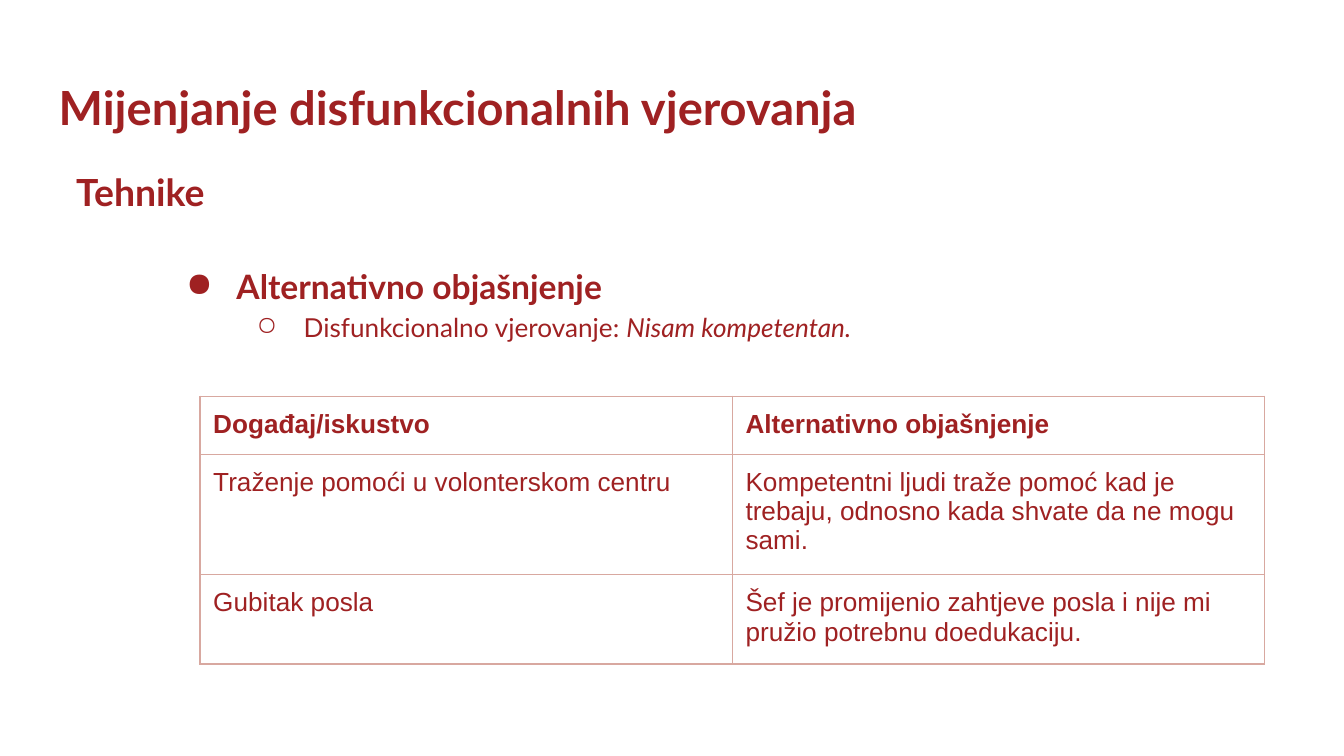
import dataclasses

import lxml.etree
import pptx
import pptx.dml.color
import pptx.oxml.ns
import pptx.util

Cm = pptx.util.Cm
Pt = pptx.util.Pt
qn = pptx.oxml.ns.qn

HUES = {"text": "9F2122", "edge": "D8A8A0", "page": "FFFFFF"}
INSET = Cm(0.25)


@dataclasses.dataclass
class Line:
    text: str
    size: float
    bold: bool = False
    font: str = "Lato"
    tail: str = ""
    mark: str = ""
    level: int = 0
    left: float = 0
    hang: float = 0


@dataclasses.dataclass
class Box:
    left: float
    top: float
    width: float
    height: float
    lines: list[Line]


BOXES = [
    Box(0.86, 1.24, 23.67, 1.6,
        [Line("Mijenjanje disfunkcionalnih vjerovanja", 25.2, True)]),
    Box(2.95, 4.67, 20.14, 9.32, [
        Line("Alternativno objašnjenje", 18, True,
             mark="●", left=1.27, hang=0.95),
        Line("Disfunkcionalno vjerovanje: ", 14, tail="Nisam kompetentan.",
             mark="○", level=1, left=2.54, hang=0.89),
    ]),
    Box(1.19, 2.95, 23.67, 1.6, [Line("Tehnike", 20, True)]),
]

ROWS = [
    (1.06, "Događaj/iskustvo", "Alternativno objašnjenje"),
    (2.18, "Traženje pomoći u volonterskom centru",
     "Kompetentni ljudi traže pomoć kad je trebaju, "
     "odnosno kada shvate da ne mogu sami."),
    (1.61, "Gubitak posla",
     "Šef je promijenio zahtjeve posla i nije mi "
     "pružio potrebnu doedukaciju."),
]


def rgb(name: str) -> pptx.dml.color.RGBColor:
    return pptx.dml.color.RGBColor.from_string(HUES[name])


def add_mark(para, line: Line) -> None:
    para.level = line.level
    para.line_spacing = 1.15
    props = para._p.get_or_add_pPr()
    props.set("marL", str(Cm(line.left)))
    props.set("indent", str(-Cm(line.hang)))
    tint = lxml.etree.SubElement(props, qn("a:buClr"))
    lxml.etree.SubElement(tint, qn("a:srgbClr"), val=HUES["text"])
    lxml.etree.SubElement(props, qn("a:buChar"), char=line.mark)


def write(para, line: Line) -> None:
    if line.mark:
        add_mark(para, line)
    para.add_run().text = line.text
    if line.tail:
        run = para.add_run()
        run.text = line.tail
        run.font.italic = True
    font = para.font
    font.name = line.font
    font.size = Pt(line.size)
    font.bold = line.bold
    font.color.rgb = rgb("text")


def pad(area) -> None:
    area.margin_left = area.margin_right = INSET
    area.margin_top = area.margin_bottom = INSET


def add_box(slide, box: Box) -> None:
    shape = slide.shapes.add_textbox(
        Cm(box.left), Cm(box.top), Cm(box.width), Cm(box.height))
    frame = shape.text_frame
    frame.word_wrap = True
    pad(frame)
    for num, line in enumerate(box.lines):
        para = frame.add_paragraph() if num else frame.paragraphs[0]
        write(para, line)


def add_edges(cell) -> None:
    props = cell._tc.get_or_add_tcPr()
    for spot, side in enumerate("LRTB"):
        edge = lxml.etree.Element(qn(f"a:ln{side}"), w=str(Pt(0.75)))
        fill = lxml.etree.SubElement(edge, qn("a:solidFill"))
        lxml.etree.SubElement(fill, qn("a:srgbClr"), val=HUES["edge"])
        props.insert(spot, edge)


def add_grid(slide, left: float, top: float, width: float) -> None:
    tall = sum(row[0] for row in ROWS)
    table = slide.shapes.add_table(
        len(ROWS), 2, Cm(left), Cm(top), Cm(width), Cm(tall)).table
    table.first_row = False
    table.horz_banding = False
    for r, (height, *texts) in enumerate(ROWS):
        table.rows[r].height = Cm(height)
        for c, text in enumerate(texts):
            cell = table.cell(r, c)
            pad(cell)
            cell.fill.background()
            add_edges(cell)
            write(cell.text_frame.paragraphs[0],
                  Line(text, 14, r == 0, "Arial"))


def main() -> None:
    deck = pptx.Presentation()
    deck.slide_width, deck.slide_height = Cm(25.4), Cm(14.29)
    slide = deck.slides.add_slide(deck.slide_layouts[6])
    slide.background.fill.solid()
    slide.background.fill.fore_color.rgb = rgb("page")
    for box in BOXES:
        add_box(slide, box)
    add_grid(slide, 3.78, 7.49, 20.12)
    deck.save("out.pptx")


if __name__ == "__main__":
    main()
